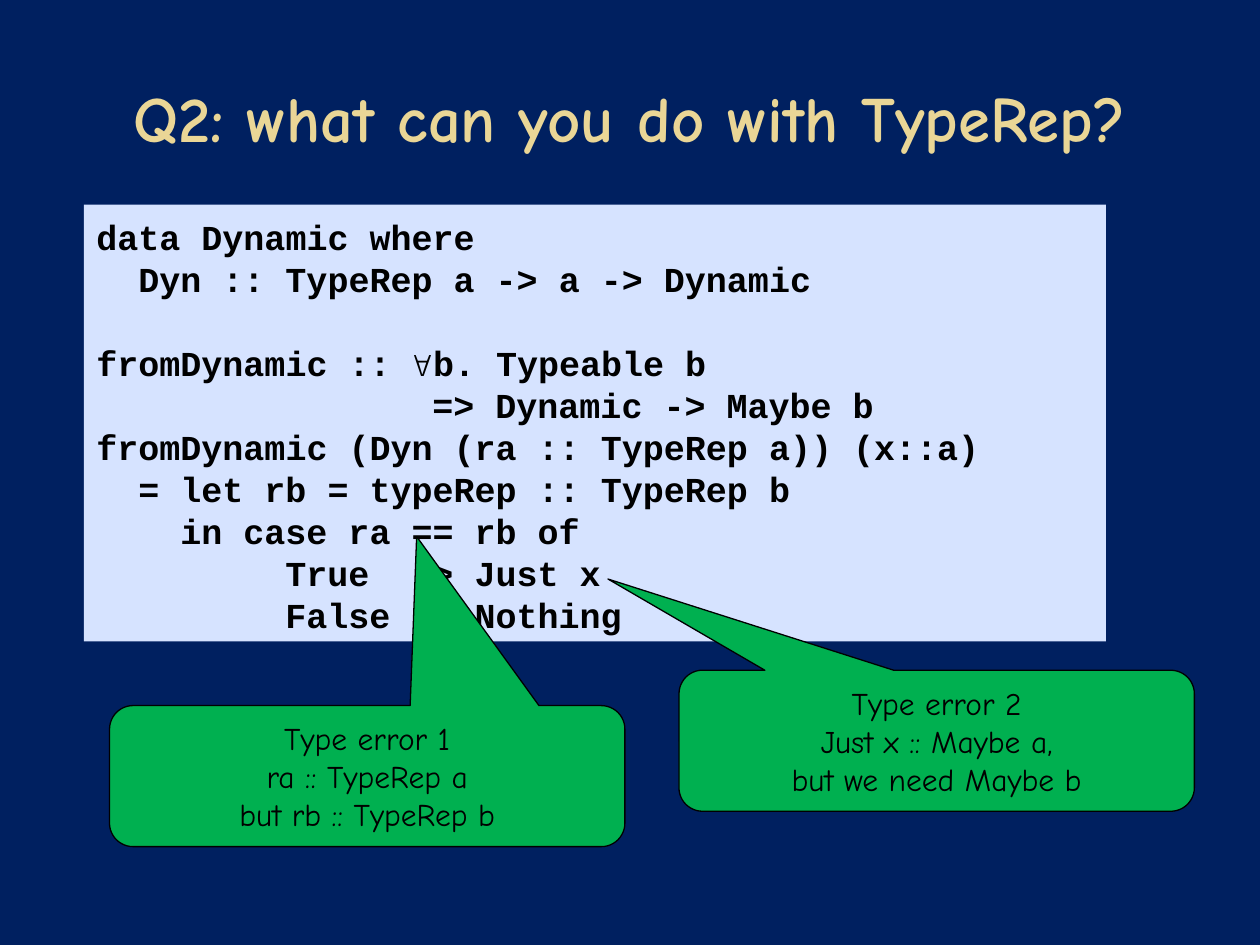
from pptx import Presentation
from pptx.dml.color import RGBColor
from pptx.enum.shapes import MSO_SHAPE
from pptx.enum.text import MSO_ANCHOR, PP_ALIGN
from pptx.util import Pt

TITLE = "Q2: what can you do with TypeRep?"
CODE = [
    (0, "data Dynamic where"),
    (2, "Dyn :: TypeRep a -> a -> Dynamic"),
    (0, "fromDynamic :: ∀b. Typeable b"),
    (16, "=> Dynamic -> Maybe b"),
    (0, "fromDynamic (Dyn (ra :: TypeRep a)) (x::a)"),
    (2, "= let rb = typeRep :: TypeRep b"),
    (4, "in case ra == rb of"),
    (9, "True  -> Just x"),
    (9, "False -> Nothing"),
]
CALLOUTS = [
    (388, 383, (-0.638, -1.147, 0.167),
     ["Type error 2", "Just x :: Maybe a,", "but we need Maybe b"]),
    (62.6, 403.2, (0.096, -1.699, 0.167),
     ["Type error 1", "ra :: TypeRep a", "but rb :: TypeRep b"]),
]
QUANTIFIER = "∀"
CODE_LINE, CODE_CHARACTER = 24, 12


def color(value):
    """Turn a hex string into a colour."""
    return RGBColor.from_string(value)


def style(para, name, size, value, bold=False, align=PP_ALIGN.CENTER):
    """Set the font and alignment of a paragraph."""
    font = para.font
    font.name, font.size, font.bold = name, Pt(size), bold
    font.color.rgb = color(value)
    para.alignment = align


def add_box(page, kind, place, fill):
    """Add a filled shape without shadow."""
    box = page.shapes.add_shape(kind, *map(Pt, place))
    box.shadow.inherit = False
    box.fill.solid()
    box.fill.fore_color.rgb = color(fill)
    box.text_frame.word_wrap = True
    return box


def add_paragraphs(frame, count):
    """Return the given number of paragraphs in an empty frame."""
    return [frame.paragraphs[0]] + [frame.add_paragraph() for _ in range(count - 1)]


def add_title(page):
    """Fill and place the title."""
    title = page.shapes.title
    title.left, title.top, title.width, title.height = map(Pt, (20, 21.6, 680, 90))
    title.text_frame.text = TITLE
    title.text_frame.vertical_anchor = MSO_ANCHOR.MIDDLE
    style(title.text_frame.paragraphs[0], "Comic Neue", 36.9, "EAD696", True)


def add_code(page):
    """Add the code panel, indented by whole characters."""
    box = add_box(page, MSO_SHAPE.RECTANGLE, (48, 116.9, 584, 249.6), "D6E3FF")
    box.line.fill.background()
    frame = box.text_frame
    frame.vertical_anchor = MSO_ANCHOR.TOP
    frame.margin_top = Pt(6)
    for para, (indent, text) in zip(add_paragraphs(frame, len(CODE)), CODE):
        style(para, "Courier New", 20, "000000", True, PP_ALIGN.LEFT)
        para.line_spacing = Pt(CODE_LINE)
        properties = para._p.get_or_add_pPr()
        properties.set("marL", str(Pt(indent * CODE_CHARACTER)))
        properties.set("indent", "0")
        before, symbol, after = text.partition(QUANTIFIER)
        for part in filter(None, (before, symbol, after)):
            span = para.add_run()
            span.text = part
            if part == QUANTIFIER:
                span.font.bold = False
        if symbol:
            para.space_before = Pt(CODE_LINE)


def add_callout(page, left, top, adjustments, lines):
    """Add a speech callout with centred lines."""
    box = add_box(page, MSO_SHAPE.ROUNDED_RECTANGULAR_CALLOUT,
                  (left, top, 294.5, 80.6), "00B050")
    for index, value in enumerate(adjustments):
        box.adjustments[index] = value
    box.line.color.rgb = color("000000")
    box.line.width = Pt(0.75)
    box.text_frame.vertical_anchor = MSO_ANCHOR.MIDDLE
    for para, text in zip(add_paragraphs(box.text_frame, len(lines)), lines):
        para.text = text
        style(para, "Comic Neue", 18, "000000")


def main():
    """Build and save the slide."""
    deck = Presentation()
    deck.slide_width, deck.slide_height = Pt(720), Pt(540)
    page = deck.slides.add_slide(deck.slide_layouts[5])
    page.background.fill.solid()
    page.background.fill.fore_color.rgb = color("002060")
    add_title(page)
    add_code(page)
    for callout in CALLOUTS:
        add_callout(page, *callout)
    deck.save("out.pptx")


if __name__ == "__main__":
    main()
